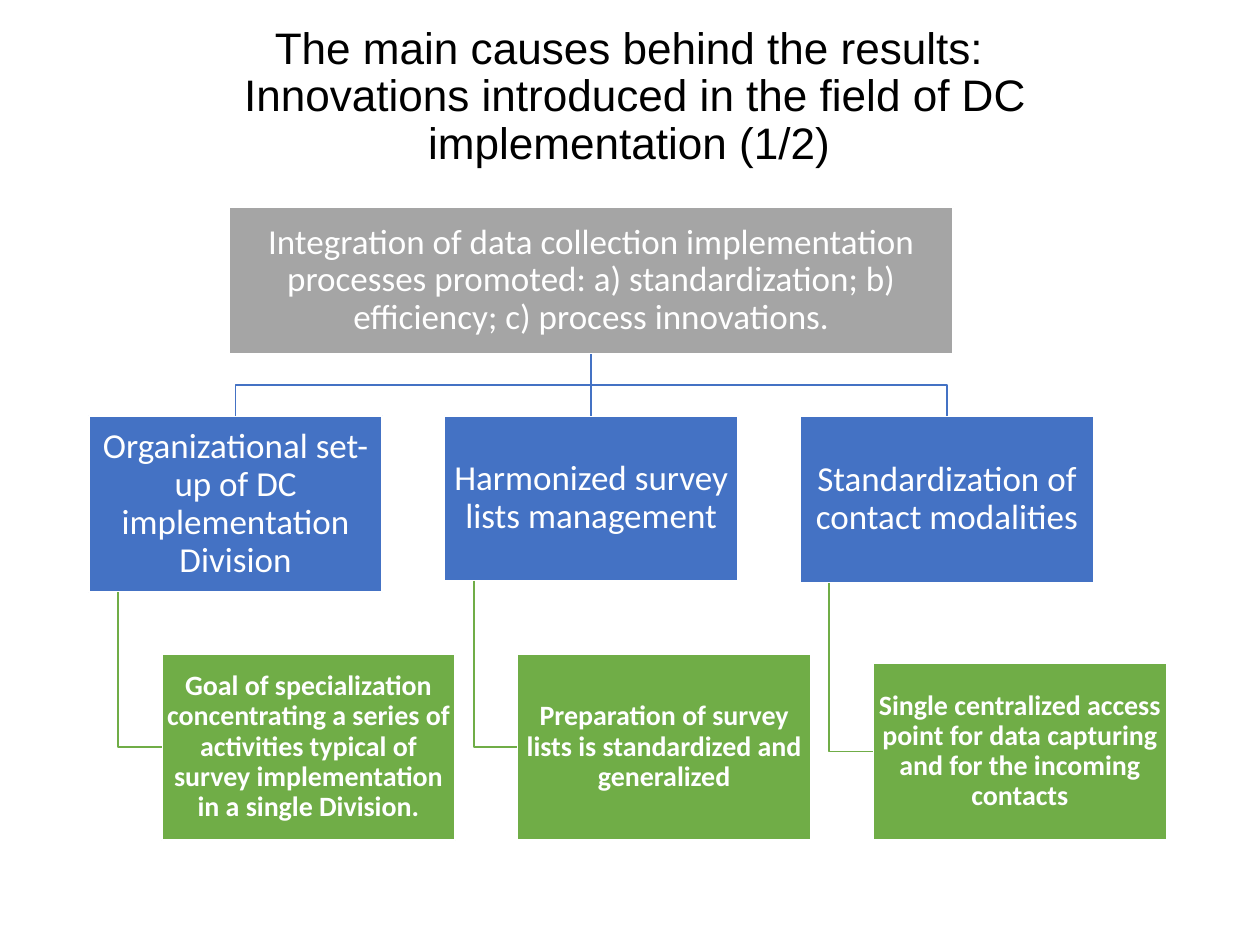
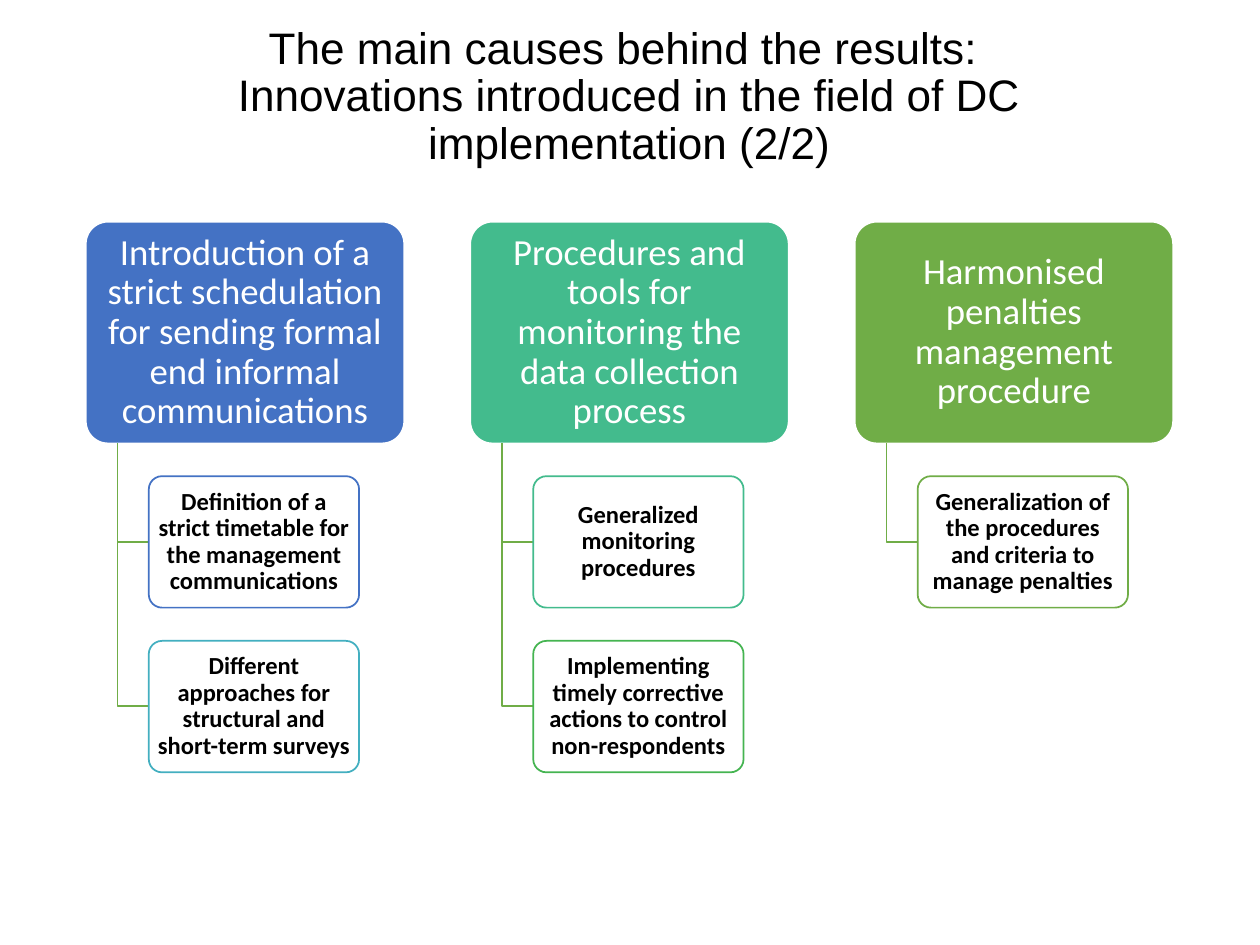
from lxml.etree import SubElement
from pptx import Presentation
from pptx.dml.color import RGBColor
from pptx.enum.shapes import MSO_CONNECTOR, MSO_SHAPE
from pptx.enum.text import MSO_ANCHOR, PP_ALIGN
from pptx.oxml.ns import qn
from pptx.util import Cm, Pt

BLUE, GREEN, GREY = "4472C4", "70AD47", "A5A5A5"
TEAL, AQUA, LEAF = "43BB8D", "43AFC0", "45B451"
WHITE, BLACK = "FFFFFF", "000000"
hue = RGBColor.from_string


def box(slide, kind, area, fill, edge, text, size, ink, bold, pad):
    shape = slide.shapes.add_shape(kind, *[Cm(v) for v in area])
    shape.shadow.inherit = False
    if kind == MSO_SHAPE.ROUNDED_RECTANGLE:
        shape.adjustments[0] = 0.1
    shape.fill.solid()
    shape.fill.fore_color.rgb = hue(fill)
    shape.line.color.rgb = hue(edge)
    shape.line.width = Pt(1)
    frame = shape.text_frame
    frame.word_wrap = True
    frame.vertical_anchor = MSO_ANCHOR.MIDDLE
    frame.margin_left = frame.margin_right = Cm(pad)
    frame.margin_top = frame.margin_bottom = Cm(pad)
    frame.text = text
    para = frame.paragraphs[0]
    para.alignment = PP_ALIGN.CENTER
    para.line_spacing = 0.9
    font = para.runs[0].font
    font.name, font.size, font.bold = "Calibri", Pt(size), bold
    font.color.rgb = hue(ink)
    return shape


def elbow(slide, points, tint):
    spots = [(Cm(x), Cm(y)) for x, y in points]
    pen = slide.shapes.build_freeform(*spots[0])
    pen.add_line_segments(spots[1:], close=False)
    shape = pen.convert_to_shape()
    shape.shadow.inherit = False
    shape.fill.background()
    shape.line.color.rgb = hue(tint)
    shape.line.width = Pt(1)


deck = Presentation()
deck.slide_width, deck.slide_height = Cm(25.4), Cm(19.05)

titles = [
    "The main causes behind the results:\v Innovations introduced in the field of DC implementation (1/2)",
    "The main causes behind the results: \vInnovations introduced in the field of DC implementation (2/2)",
]
for title in titles:
    slide = deck.slides.add_slide(deck.slide_layouts[6])
    head = slide.shapes.add_textbox(Cm(1.73), Cm(0.76), Cm(21.9), Cm(2.41))
    frame = head.text_frame
    frame.word_wrap = True
    frame.vertical_anchor = MSO_ANCHOR.MIDDLE
    frame.text = title
    para = frame.paragraphs[0]
    para.alignment = PP_ALIGN.CENTER
    para.line_spacing = 0.9
    for run in para.runs:
        run.font.name, run.font.size = "Arial", Pt(25.2)
        run.font.color.rgb = hue(BLACK)

first, second = deck.slides

rect = MSO_SHAPE.RECTANGLE
root = box(first, rect, (4.62, 4.17, 14.6, 2.97), GREY, WHITE,
           "Integration of data collection implementation processes promoted: "
           "a) standardization; b) efficiency; c) process innovations.",
           20, WHITE, False, 0.03)
branches = [
    ("Organizational set-up of DC implementation Division", 3.56,
     "Goal of specialization concentrating a series of activities typical of "
     "survey implementation in a single Division.", 13.18),
    ("Harmonized survey lists management", 3.33,
     "Preparation of survey lists is standardized and generalized", 13.18),
    ("Standardization of contact modalities", 3.38,
     "Single centralized access point for data capturing and for the incoming contacts", 13.36),
]
wide, top, base = 5.92, 8.38, 16.94
trunk, fork = 11.92, 7.76
for i, (name, high, goal, start) in enumerate(branches):
    left = 1.79 + 7.17 * i
    mid = left + wide / 2
    node = box(first, rect, (left, top, wide, high), BLUE, WHITE,
               name, 20, WHITE, False, 0.03)
    box(first, rect, (left + 1.47, start, wide, base - start), GREEN, WHITE,
        goal, 16, WHITE, True, 0.03)
    stem, level = left + 0.59, (start + base) / 2
    elbow(first, [(stem, top + high), (stem, level), (left + 1.47, level)], GREEN)
    if i == 1:
        link = first.shapes.add_connector(MSO_CONNECTOR.STRAIGHT, 0, 0, 0, 0)
        link.begin_connect(root, 2)
        link.end_connect(node, 0)
        link.line.color.rgb = hue(BLUE)
        link.line.width = Pt(1)
        SubElement(link._element.spPr, qn("a:effectLst"))
    else:
        elbow(first, [(trunk, 7.14), (trunk, fork), (mid, fork), (mid, top)], BLUE)

groups = [
    ("Introduction of a strict schedulation for sending formal end informal communications", BLUE, [
        ("Definition of a strict timetable for the management communications", BLUE),
        ("Different approaches for structural and short-term surveys", AQUA)]),
    ("Procedures and tools for monitoring the data collection process", TEAL, [
        ("Generalized monitoring procedures", TEAL),
        ("Implementing timely corrective actions to control non-respondents", LEAF)]),
    ("Harmonised penalties management procedure", GREEN, [
        ("Generalization of the procedures and criteria to manage penalties", GREEN)]),
]
round_box = MSO_SHAPE.ROUNDED_RECTANGLE
for i, (name, tint, items) in enumerate(groups):
    left = 1.73 + 7.75 * i
    box(second, round_box, (left, 4.47, 6.42, 4.47), tint, WHITE,
        name, 21, WHITE, False, 0.09)
    for j, (text, edge) in enumerate(items):
        top = 9.6 + 3.32 * j
        stem, level = left + 0.64, top + 1.32
        elbow(second, [(stem, 8.94), (stem, level), (left + 1.27, level)], GREEN)
        box(second, round_box, (left + 1.27, top, 4.24, 2.65), WHITE, edge,
            text, 14, BLACK, True, 0.06)

deck.save("out.pptx")
